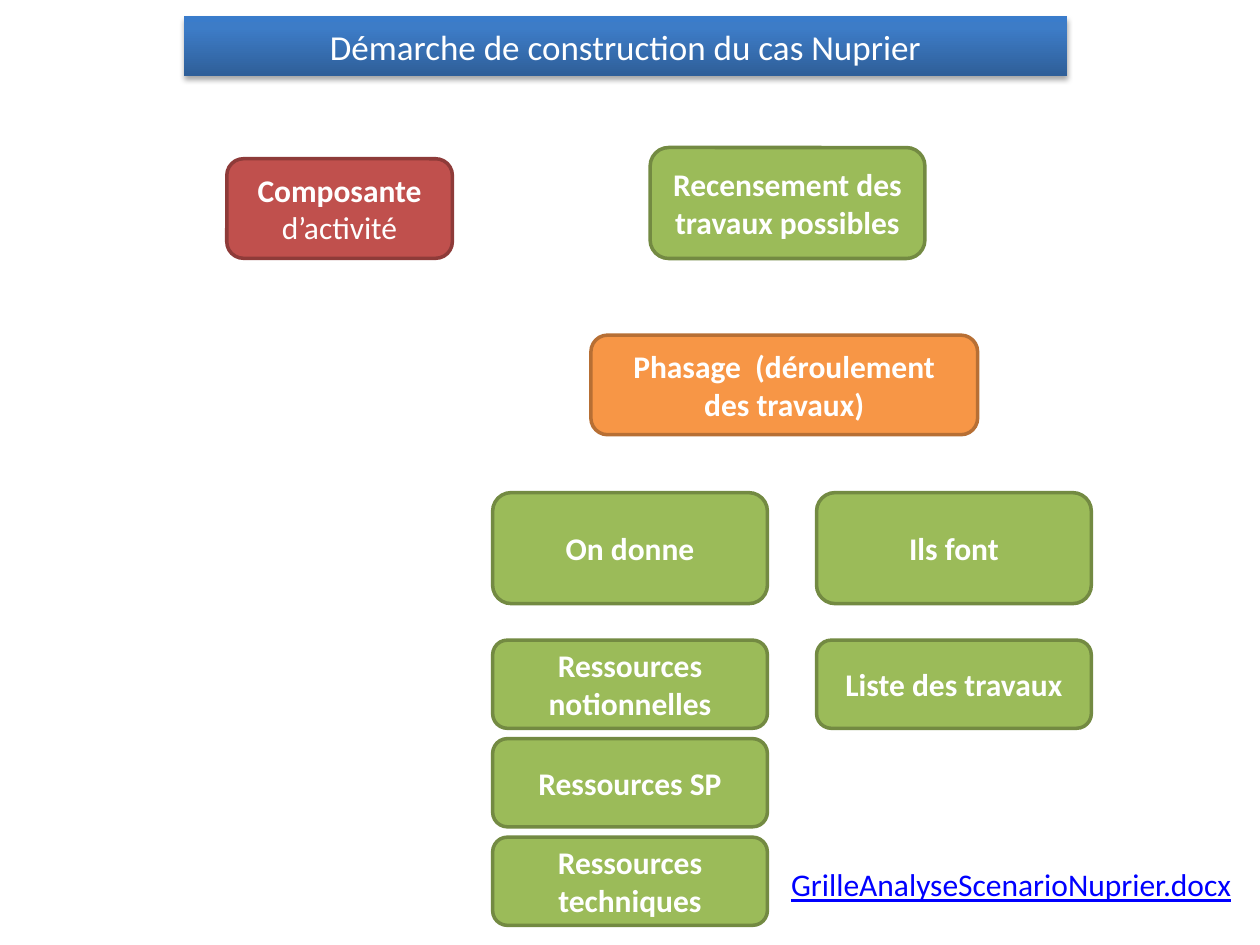
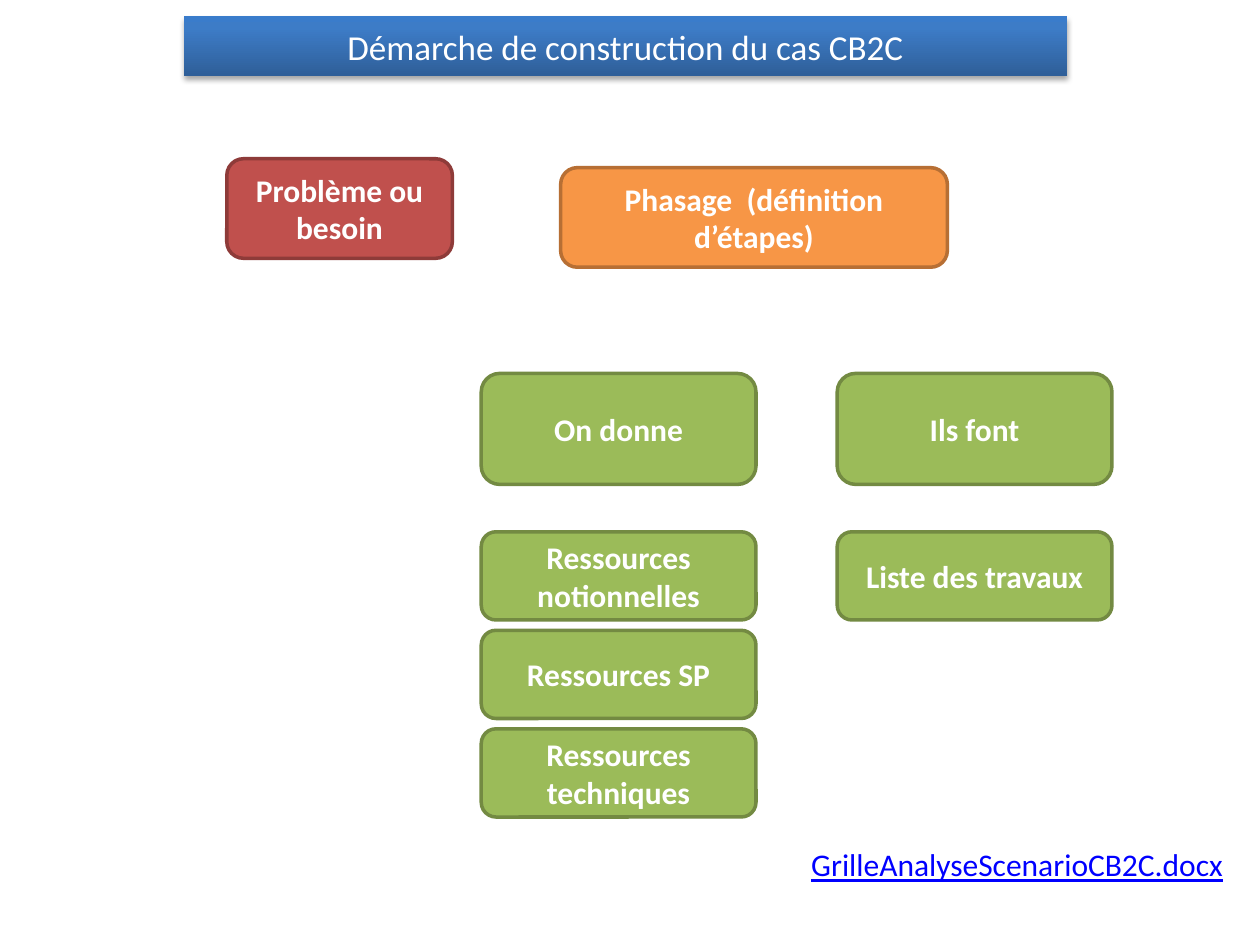
"""Build two slides showing how the Nuprier and CB2C cases are constructed."""
import copy

import pptx
import pptx.dml.color
import pptx.enum.shapes
import pptx.enum.text
import pptx.oxml
import pptx.oxml.ns
import pptx.util

Pt = pptx.util.Pt
SHAPES = pptx.enum.shapes.MSO_SHAPE
FONT = "Calibri"
COLORS = {
    "white": "FFFFFF",
    "link": "0000FF",
    "red": "C0504D",
    "red_line": "8E3B39",
    "orange": "F79646",
    "orange_line": "B76F34",
    "green": "9BBB59",
    "green_line": "738A42",
    "band_bottom": "2F5F99",
    "band_middle": "3D7CC7",
    "band_top": "3A7CCB",
    "shadow": "000000",
}
BAND = (105.1, 9.4, 504.7, 33.8)
START = (129.6, 90.7, 128.9, 56.9)
PHASE_SIZE = (221, 56.9)
CARD_W, HEAD_H, ITEM_H, ITEM_STEP = 157, 63.4, 50.4, 56.3
COLUMNS = {
    "On donne": ["Ressources notionnelles", "Ressources SP", "Ressources techniques"],
    "Ils font": ["Liste des travaux"],
}


def rgb(name):
    return pptx.dml.color.RGBColor.from_string(COLORS[name])


def write(sp, runs, size=18, color="white", centred=True):
    """Write (text, bold) runs as the only paragraph of a shape."""
    tf = sp.text_frame
    tf.word_wrap = True
    p = tf.paragraphs[0]
    p.font.name = FONT
    p.font.size = Pt(size)
    p.font.color.rgb = rgb(color)
    if centred:
        tf.vertical_anchor = pptx.enum.text.MSO_ANCHOR.MIDDLE
        p.alignment = pptx.enum.text.PP_ALIGN.CENTER
    for text, bold in runs:
        r = p.add_run()
        r.text = text
        r.font.bold = bold
    return p


def add_card(s, box, runs, color="green"):
    """Add a rounded card; plain text is written in bold."""
    sp = s.shapes.add_shape(SHAPES.ROUNDED_RECTANGLE, *map(Pt, box))
    sp.shadow.inherit = False
    sp.fill.solid()
    sp.fill.fore_color.rgb = rgb(color)
    sp.line.color.rgb = rgb(color + "_line")
    sp.line.width = Pt(2)
    write(sp, [(runs, True)] if isinstance(runs, str) else runs)


def add_band(s, box, title):
    """Add the title band with its gradient and soft shadow."""
    sp = s.shapes.add_shape(SHAPES.RECTANGLE, *map(Pt, box))
    sp.line.fill.background()
    sp.fill.gradient()
    sp.fill.gradient_angle = 90
    qn = pptx.oxml.ns.qn
    stop_list = next(sp.element.iter(qn("a:gsLst")))
    stop_list.append(copy.deepcopy(stop_list[-1]))
    places = [("band_bottom", 0), ("band_middle", 0.8), ("band_top", 1)]
    for stop, (color, position) in zip(sp.fill.gradient_stops, places):
        stop.color.rgb = rgb(color)
        stop.position = position
    sp.shadow.inherit = False
    next(sp.element.iter(qn("a:effectLst"))).append(pptx.oxml.parse_xml(
        f'<a:outerShdw {pptx.oxml.ns.nsdecls("a")} blurRad="{Pt(3.1)}" '
        f'dist="{Pt(1.8)}" dir="5400000" rotWithShape="0">'
        f'<a:srgbClr val="{COLORS["shadow"]}"><a:alpha val="35000"/></a:srgbClr>'
        '</a:outerShdw>'))
    write(sp, [(title, False)], size=20)


def add_columns(s, left, top, column_step, list_drop):
    """Add each column head with its list of cards below it."""
    for i, (head, items) in enumerate(COLUMNS.items()):
        x = left + i * column_step
        add_card(s, (x, top, CARD_W, HEAD_H), head)
        for j, item in enumerate(items):
            y = top + list_drop + j * ITEM_STEP
            add_card(s, (x, y, CARD_W, ITEM_H), item)


def add_file_name(s, box, name):
    """Add the underlined name of the analysis grid."""
    sp = s.shapes.add_textbox(*map(Pt, box))
    p = write(sp, [(name, False)], color="link", centred=False)
    p.font.underline = True
    sp.text_frame.auto_size = pptx.enum.text.MSO_AUTO_SIZE.SHAPE_TO_FIT_TEXT


def add_case(prs, case, start, phase, phase_at, columns, file_box):
    """Add a slide for one case and return it."""
    s = prs.slides.add_slide(prs.slide_layouts[6])
    add_band(s, BAND, f"Démarche de construction du cas {case}")
    add_card(s, START, start, "red")
    add_card(s, phase_at + PHASE_SIZE, phase, "orange")
    add_columns(s, *columns)
    add_file_name(s, file_box, f"GrilleAnalyseScenario{case}.docx")
    return s


def main():
    prs = pptx.Presentation()
    prs.slide_width, prs.slide_height = Pt(720), Pt(540)
    s = add_case(prs, "Nuprier", [("Composante ", True), ("d’activité", False)],
                 "Phasage  (déroulement des travaux)", (337.7, 191.5),
                 (281.5, 281.5, 185.1, 84.3), (445, 491, 268, 29))
    add_card(s, (371.5, 84.3, CARD_W, HEAD_H), "Recensement des travaux possibles")
    add_case(prs, "CB2C", "Problème ou besoin",
             "Phasage  (définition d’étapes)", (320.4, 95.8),
             (275, 213.4, 203.4, 90.5), (456.5, 479.5, 263.5, 29))
    prs.save("out.pptx")


if __name__ == "__main__":
    main()
